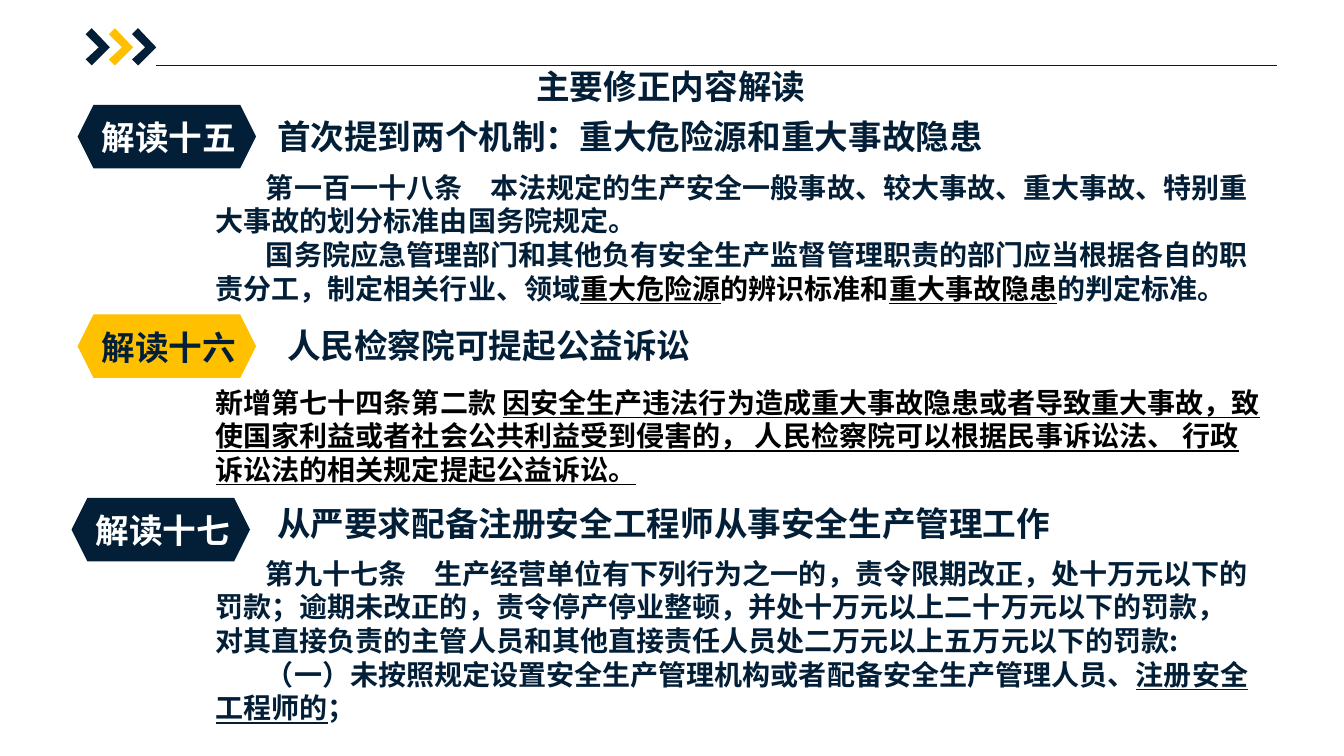
from dataclasses import dataclass

from lxml.etree import SubElement
from pptx import Presentation
from pptx.dml.color import RGBColor
from pptx.enum.shapes import MSO_CONNECTOR, MSO_SHAPE
from pptx.enum.text import MSO_ANCHOR, MSO_AUTO_SIZE, PP_ALIGN
from pptx.oxml.ns import qn
from pptx.util import Inches, Pt


@dataclass(frozen=True)
class Theme:
    navy: RGBColor = RGBColor(0x03, 0x1F, 0x37)
    gold: RGBColor = RGBColor(0xFF, 0xC0, 0x00)
    white: RGBColor = RGBColor(0xFF, 0xFF, 0xFF)
    black: RGBColor = RGBColor(0x00, 0x00, 0x00)
    font: str = "Noto Sans CJK SC"
    heading_size: int = 24
    heading_spacing: int = 29
    body_size: int = 20
    body_spacing: int = 24


THEME = Theme()


@dataclass(frozen=True)
class Span:
    text: str
    color: RGBColor = THEME.navy
    underline: bool = False


@dataclass(frozen=True)
class Section:
    label: str
    badge_at: tuple
    badge_fill: RGBColor
    label_color: RGBColor
    heading: str
    heading_at: tuple
    body_box: tuple
    body_indent: float
    paragraphs: tuple


SECTIONS = (
    Section(
        "解读十五", (0.77, 1.04), THEME.navy, THEME.white,
        "首次提到两个机制：重大危险源和重大事故隐患", (2.65, 1.1),
        (2.04, 1.64, 10.46, 1.45), 0.5,
        (
            (Span("第一百一十八条　本法规定的生产安全一般事故、较大事故、重大事故、"
                  "特别重大事故的划分标准由国务院规定。"),),
            (
                Span("国务院应急管理部门和其他负有安全生产监督管理职责的部门应当根据"
                     "各自的职责分工，制定相关行业、领域"),
                Span("重大危险源", THEME.black, True),
                Span("的辨识标准和", THEME.black),
                Span("重大事故隐患", THEME.black, True),
                Span("的判定标准。"),
            ),
        ),
    ),
    Section(
        "解读十六", (0.77, 3.12), THEME.gold, THEME.navy,
        "人民检察院可提起公益诉讼", (2.75, 3.17),
        (2.04, 3.77, 10.62, 1.11), 0,
        (
            (
                Span("新增第七十四条第二款 ", THEME.black),
                Span("因安全生产违法行为造成重大事故隐患或者导致重大事故，致使国家利益"
                     "或者社会公共利益受到侵害的， 人民检察院可以根据民事诉讼法、 "
                     "行政诉讼法的相关规定提起公益诉讼。", THEME.black, True),
            ),
        ),
    ),
    Section(
        "解读十七", (0.71, 4.94), THEME.navy, THEME.white,
        "从严要求配备注册安全工程师从事安全生产管理工作", (2.65, 4.94),
        (2.04, 5.47, 10.46, 1.78), 0.5,
        (
            (Span("第九十七条　生产经营单位有下列行为之一的，责令限期改正，处十万元以下的"
                  "罚款；逾期未改正的，责令停产停业整顿，并处十万元以上二十万元以下的罚款，"
                  "对其直接负责的主管人员和其他直接责任人员处二万元以上五万元以下的罚款:"),),
            (
                Span("（一）未按照规定设置安全生产管理机构或者配备安全生产管理人员、"),
                Span("注册安全工程师的", underline=True),
                Span("；"),
            ),
        ),
    ),
)


def format_paragraph(paragraph, size, spacing, color, indent=0):
    paragraph.alignment = PP_ALIGN.LEFT
    paragraph.line_spacing = Pt(spacing)
    font = paragraph.font
    font.name = THEME.font
    font.size = Pt(size)
    font.bold = True
    font.color.rgb = color
    properties = paragraph._p.get_or_add_pPr()
    properties.set("marL", "0")
    properties.set("indent", str(Inches(indent)))
    east_asian = SubElement(properties.find(qn("a:defRPr")), qn("a:ea"))
    east_asian.set("typeface", THEME.font)


def fill_plain(shape, color):
    shape.shadow.inherit = False
    shape.fill.solid()
    shape.fill.fore_color.rgb = color
    shape.line.fill.background()


def set_title(slide, text):
    title = slide.shapes.title
    title.left, title.top = Inches(5.25), Inches(0.61)
    title.width, title.height = Inches(3.51), Inches(0.48)
    frame = title.text_frame
    frame.text = text
    frame.word_wrap = True
    frame.auto_size = MSO_AUTO_SIZE.NONE
    frame.vertical_anchor = MSO_ANCHOR.TOP
    frame.margin_left = frame.margin_right = Inches(0.07)
    frame.margin_top = frame.margin_bottom = Inches(0.04)
    format_paragraph(frame.paragraphs[0], THEME.heading_size,
                     THEME.heading_spacing, THEME.navy)


def add_chevron(slide, left, color):
    top, middle, bottom = 0.28, 0.47, 0.65
    points = [(0, 0.34), (0.06, top), (0.24, middle),
              (0.06, bottom), (0, 0.59), (0.13, middle)]
    corners = [(Inches(left + x), Inches(y)) for x, y in points]
    builder = slide.shapes.build_freeform(*corners[0], scale=1.0)
    builder.add_line_segments(corners[1:], close=True)
    fill_plain(builder.convert_to_shape(), color)


def add_header_rule(slide):
    rule = slide.shapes.add_connector(
        MSO_CONNECTOR.STRAIGHT,
        Inches(1.55), Inches(0.65), Inches(12.67), Inches(0.65))
    rule.line.color.rgb = THEME.navy
    rule.line.width = Pt(0.5)
    SubElement(rule._element.spPr, qn("a:effectLst"))


def add_text_frame(slide, left, top, width, height):
    box = slide.shapes.add_textbox(
        Inches(left), Inches(top), Inches(width), Inches(height))
    box.text_frame.word_wrap = True
    return box.text_frame


def add_heading(slide, text, left, top, color):
    width = len(text) * THEME.heading_size / 72 + 0.27
    frame = add_text_frame(slide, left, top, width, 0.5)
    frame.text = text
    format_paragraph(frame.paragraphs[0], THEME.heading_size,
                     THEME.heading_spacing, color)


def add_badge(slide, section):
    left, top = section.badge_at
    hexagon = slide.shapes.add_shape(
        MSO_SHAPE.HEXAGON, Inches(left), Inches(top), Inches(1.77), Inches(0.63))
    fill_plain(hexagon, section.badge_fill)
    add_heading(slide, section.label, left + 0.14, top + 0.07, section.label_color)


def add_body(slide, section):
    frame = add_text_frame(slide, *section.body_box)
    for index, spans in enumerate(section.paragraphs):
        paragraph = frame.add_paragraph() if index else frame.paragraphs[0]
        format_paragraph(paragraph, THEME.body_size, THEME.body_spacing,
                         spans[0].color, section.body_indent)
        for span in spans:
            run = paragraph.add_run()
            run.text = span.text
            if span.color != spans[0].color:
                run.font.color.rgb = span.color
            if span.underline:
                run.font.underline = True


def main():
    presentation = Presentation()
    presentation.slide_width = Inches(13.33)
    presentation.slide_height = Inches(7.5)
    slide = presentation.slides.add_slide(presentation.slide_layouts[5])
    set_title(slide, "主要修正内容解读")
    add_header_rule(slide)
    for index, color in enumerate((THEME.navy, THEME.gold, THEME.navy)):
        add_chevron(slide, 0.85 + index * 0.23, color)
    for section in SECTIONS:
        add_badge(slide, section)
        add_heading(slide, section.heading, *section.heading_at, THEME.navy)
        add_body(slide, section)
    presentation.save("out.pptx")


if __name__ == "__main__":
    main()
